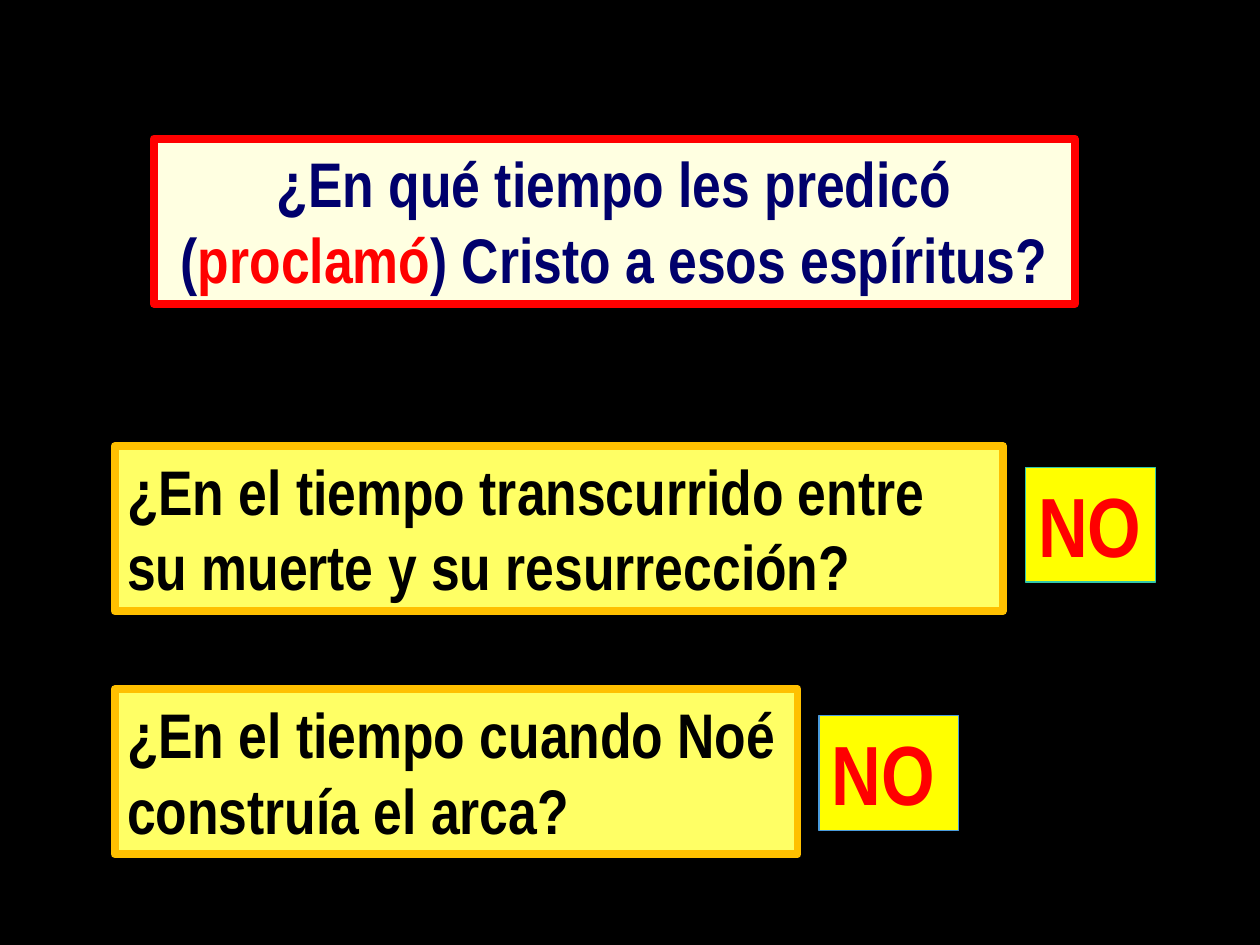
from pptx import Presentation
from pptx import util as u
from pptx.dml.color import RGBColor
from pptx.enum import text

Inches = u.Inches
RED, NAVY, BLACK = "FF0000", "00006C", "000000"
CREAM, PALE_YELLOW, YELLOW, AMBER = "FFFFE1", "FFFF65", "FFFF00", "FFC000"


def color(hex_string):
    return RGBColor.from_string(hex_string)


def write_box(box, spans, fill, line, line_width=4.5, size=36,
              align=text.PP_ALIGN.LEFT, wrap=True):
    """Frame the box and fill it with (words, colour) spans."""
    box.fill.solid()
    box.fill.fore_color.rgb = color(fill)
    box.line.color.rgb = color(line)
    box.line.width = u.Pt(line_width)
    frame = box.text_frame
    frame.word_wrap = wrap
    frame.auto_size = text.MSO_AUTO_SIZE.SHAPE_TO_FIT_TEXT
    frame.vertical_anchor = text.MSO_ANCHOR.TOP
    para = frame.paragraphs[0]
    para.alignment = align
    for words, ink in spans:
        span = para.add_run()
        span.text = words
        span.font.name = "Arial Narrow"
        span.font.size = u.Pt(size)
        span.font.bold = True
        span.font.color.rgb = color(ink)


deck = Presentation()
deck.slide_width, deck.slide_height = Inches(10), Inches(7.5)
page = deck.slides.add_slide(deck.slide_layouts[5])
page.background.fill.solid()
page.background.fill.fore_color.rgb = color(BLACK)

title = page.shapes.title
title.left, title.top = Inches(1.22), Inches(1.1)
title.width, title.height = Inches(7.31), Inches(1.31)
write_box(
    title,
    [("¿En qué tiempo les predicó (", NAVY), ("proclamó", RED),
     (") Cristo a esos espíritus?", NAVY)],
    CREAM, RED, align=text.PP_ALIGN.CENTER,
)

questions = [
    ("¿En el tiempo transcurrido entre su muerte y su resurrección?", 3.54, 7.05),
    ("¿En el tiempo cuando Noé construía el arca?", 5.47, 5.42),
]
for words, top, width in questions:
    question = page.shapes.add_textbox(
        Inches(0.91), Inches(top), Inches(width), Inches(1.31))
    write_box(question, [(words, BLACK)], PALE_YELLOW, AMBER)

answers = [
    (6.5, 5.68, 1.11, "4A9BDC", True),
    (8.14, 3.71, 1.03, "32C7A9", False),
]
for left, top, width, line, wrap in answers:
    answer = page.shapes.add_textbox(
        Inches(left), Inches(top), Inches(width), Inches(0.91))
    write_box(answer, [("NO", RED)], YELLOW, line,
              line_width=0.75, size=48, wrap=wrap)

deck.save("out.pptx")
